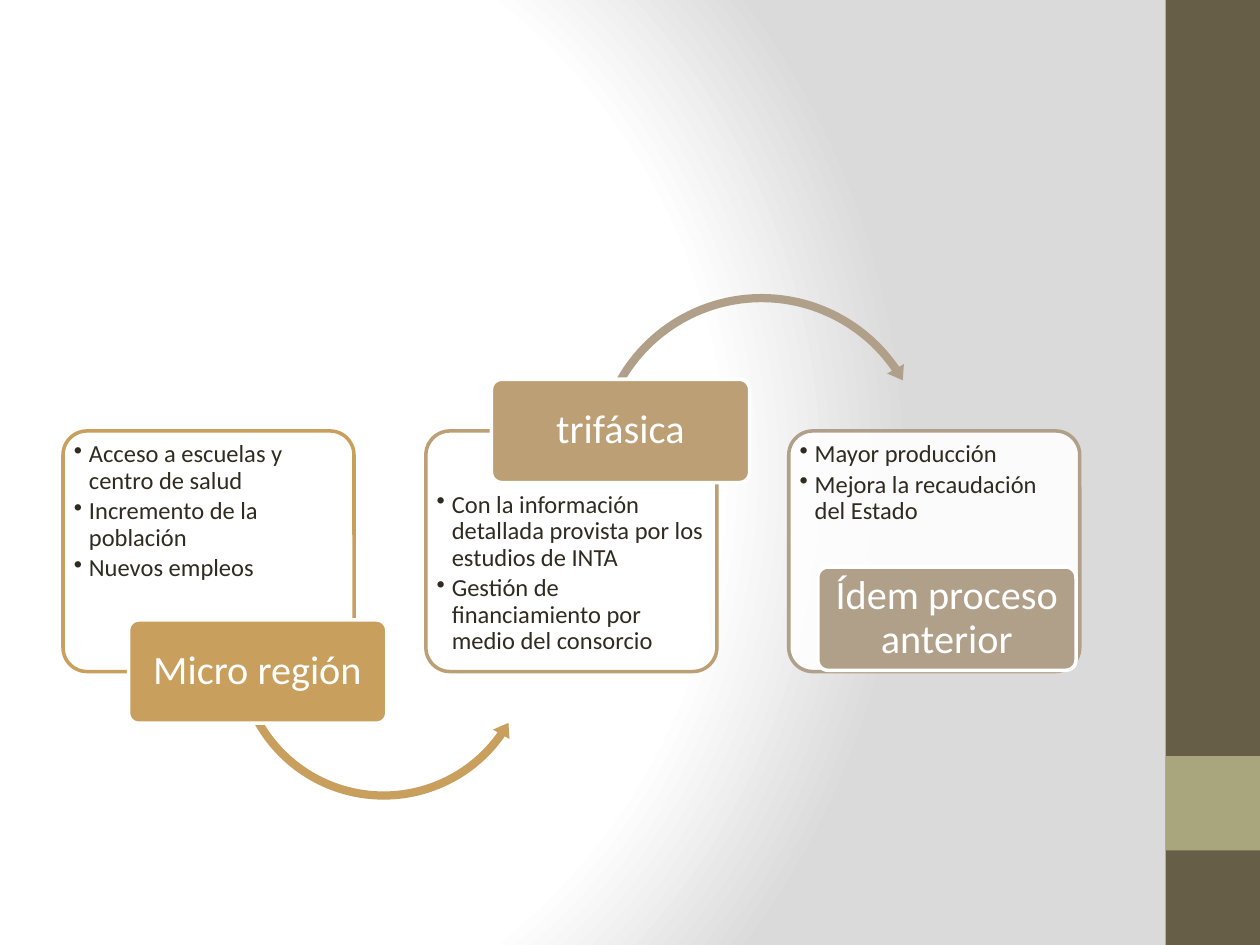
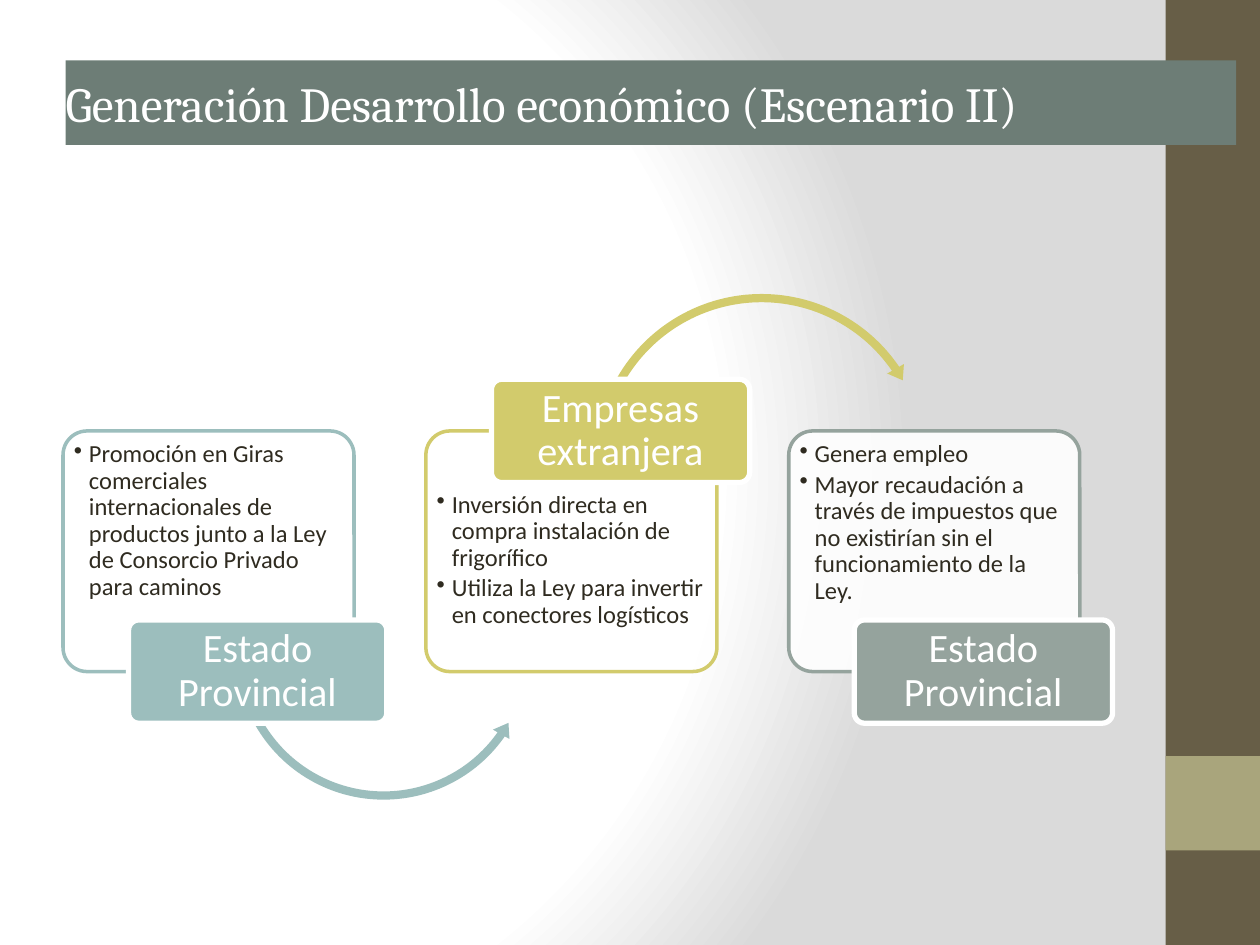
"""Build two process slides that share a background, side bands and step diagrams."""
from dataclasses import dataclass
from typing import Optional

from lxml.etree import SubElement
from pptx import Presentation
from pptx.dml.color import RGBColor
from pptx.enum.shapes import MSO_SHAPE
from pptx.enum.text import MSO_ANCHOR, MSO_AUTO_SIZE, PP_ALIGN
from pptx.oxml import parse_xml
from pptx.oxml.ns import nsdecls, qn
from pptx.util import Inches, Pt

WHITE = RGBColor(0xFF, 0xFF, 0xFF)
INK = RGBColor(0x2F, 0x2B, 0x20)
BAND = RGBColor(0x67, 0x5E, 0x47)
BAND_ACCENT = RGBColor(0xA9, 0xA5, 0x7C)
TITLE_FILL = RGBColor(0x6D, 0x7D, 0x76)
GOLD = RGBColor(0xC8, 0x9F, 0x5D)
TAN = RGBColor(0xBC, 0x9F, 0x74)
TAUPE = RGBColor(0xB1, 0xA0, 0x89)
AQUA = RGBColor(0x9C, 0xBE, 0xBD)
OLIVE = RGBColor(0xD2, 0xCB, 0x6C)
SAGE = RGBColor(0x95, 0xA3, 0x9D)

BODY_FONT = "Calibri"
TITLE_FONT = "Cambria"
TITLE_ONLY, BLANK = 5, 6

LEFT, PITCH = 0.5, 2.88
PANEL_TOP, PANEL_W, PANEL_H = 3.42, 2.31, 1.91
LABEL_DX, LABEL_W, LABEL_H = 0.52, 2.05, 0.82
LABEL_LOW, LABEL_HIGH = 4.92, 3.01

BACKGROUND = f"""<a:gradFill {nsdecls("a")} rotWithShape="1"><a:gsLst>
<a:gs pos="0"><a:srgbClr val="FFFFFF"/></a:gs>
<a:gs pos="75000"><a:srgbClr val="FFFFFF"/></a:gs>
<a:gs pos="100000"><a:srgbClr val="DADADA"/></a:gs></a:gsLst>
<a:path path="circle"><a:fillToRect l="20000" t="50000" r="100000" b="50000"/></a:path>
</a:gradFill>"""


@dataclass(frozen=True)
class Arrow:
    """Shape, box and adjustments of a curved arrow between two steps."""
    kind: MSO_SHAPE
    left: float
    top: float
    size: float
    adjustments: tuple


@dataclass(frozen=True)
class Step:
    """One step of a process: a label over a panel of bullets."""
    label: str
    bullets: tuple
    color: RGBColor
    arrow_color: Optional[RGBColor] = None
    label_at: Optional[tuple] = None


ARROWS = (
    Arrow(MSO_SHAPE.LEFT_CIRCULAR_ARROW, 1.83, 3.96, 2.43,
          (0.027, 3.247, 21.002, 90.245, 0.031)),
    Arrow(MSO_SHAPE.CIRCULAR_ARROW, 4.68, 2.29, 2.73,
          (0.024, 2.875, 195.369, 125.755, 0.028)),
)

REGION_STEPS = (
    Step("Micro región",
         ("Acceso a escuelas y centro de salud", "Incremento de la población",
          "Nuevos empleos"), GOLD, GOLD),
    Step("trifásica",
         ("Con la información detallada provista por los estudios de INTA",
          "Gestión de financiamiento por medio del consorcio"), TAN, TAUPE),
    Step("Ídem proceso anterior",
         ("Mayor producción", "Mejora la recaudación del Estado"), TAUPE,
         label_at=(6.49, 4.5)),
)

INVESTMENT_STEPS = (
    Step("Estado Provincial",
         ("Promoción en Giras comerciales internacionales de productos junto a la "
          "Ley de Consorcio Privado para caminos",), AQUA, AQUA),
    Step("Empresas extranjera",
         ("Inversión directa en compra instalación de frigorífico",
          "Utiliza la Ley para invertir en conectores logísticos"), OLIVE, OLIVE),
    Step("Estado Provincial",
         ("Genera empleo",
          "Mayor recaudación a través de impuestos que no existirían sin el "
          "funcionamiento de la Ley."), SAGE),
)


def add_block(slide, kind, left, top, width, height, fill, line=None, line_width=2.0):
    """Add a preset shape without shadow."""
    sp = slide.shapes.add_shape(kind, Inches(left), Inches(top), Inches(width), Inches(height))
    sp.shadow.inherit = False
    sp.fill.solid()
    sp.fill.fore_color.rgb = fill
    if line is None:
        sp.line.fill.background()
    else:
        sp.line.color.rgb = line
        sp.line.width = Pt(line_width)
    return sp


def add_bullet(p) -> None:
    """Give a paragraph a hanging bullet."""
    pPr = p._p.get_or_add_pPr()
    pPr.set("marL", str(Inches(0.12)))
    pPr.set("indent", str(Inches(-0.12)))
    SubElement(pPr, qn("a:buChar")).set("char", "•")


def write_text(sp, *paragraphs: str, size: float, color: RGBColor, font=BODY_FONT,
               align=PP_ALIGN.LEFT, anchor=MSO_ANCHOR.TOP, insets=(0.03, 0.03, 0.03, 0.03),
               bullets=False, spacing=0.9, after=0.0) -> None:
    """Write formatted paragraphs into a shape."""
    tf = sp.text_frame
    tf.word_wrap = True
    tf.auto_size = MSO_AUTO_SIZE.NONE
    tf.vertical_anchor = anchor
    tf.margin_left, tf.margin_top, tf.margin_right, tf.margin_bottom = map(Inches, insets)
    for i, text in enumerate(paragraphs):
        p = tf.add_paragraph() if i else tf.paragraphs[0]
        if bullets:
            add_bullet(p)
        p.alignment = align
        p.line_spacing = spacing
        p.space_after = Pt(after)
        r = p.add_run()
        r.text = text
        r.font.name = font
        r.font.size = Pt(size)
        r.font.color.rgb = color


def add_panel(slide, step: Step, left: float, text_top: float) -> None:
    """Add the translucent outlined panel with the bullets of a step."""
    sp = add_block(slide, MSO_SHAPE.ROUNDED_RECTANGLE, left, PANEL_TOP, PANEL_W, PANEL_H,
                   WHITE, step.color)
    sp.adjustments[0] = 0.1
    color = sp.fill._xPr.find(qn("a:solidFill"))[0]
    SubElement(color, qn("a:alpha")).set("val", "90000")
    write_text(sp, *step.bullets, size=14, color=INK, bullets=True, after=2.3,
               insets=(0.03, text_top, 0.03, 0.03))


def add_arrow(slide, arrow: Arrow, color: RGBColor) -> None:
    """Add a curved arrow."""
    sp = add_block(slide, arrow.kind, arrow.left, arrow.top, arrow.size, arrow.size, color)
    for i, value in enumerate(arrow.adjustments):
        sp.adjustments[i] = value


def add_label(slide, step: Step, left: float, top: float, outline: float) -> None:
    """Add the filled label of a step."""
    sp = add_block(slide, MSO_SHAPE.ROUNDED_RECTANGLE, left, top, LABEL_W, LABEL_H,
                   step.color, WHITE, outline)
    sp.adjustments[0] = 0.1
    write_text(sp, step.label, size=23, color=WHITE, align=PP_ALIGN.CENTER,
               anchor=MSO_ANCHOR.MIDDLE, insets=(0.05, 0.03, 0.05, 0.03))


def add_process(slide, steps: tuple, outline: float) -> None:
    """Draw the steps from left to right, with labels alternately low and high."""
    for i, step in enumerate(steps):
        left = LEFT + i * PITCH
        high = i % 2 == 1
        add_panel(slide, step, left, 0.43 if high else 0.03)
        if step.arrow_color is not None:
            add_arrow(slide, ARROWS[i], step.arrow_color)
        label_left, label_top = step.label_at or (
            left + LABEL_DX, LABEL_HIGH if high else LABEL_LOW)
        add_label(slide, step, label_left, label_top, outline)


def set_background(master) -> None:
    """Give the master the radial gradient background."""
    master.background.fill.solid()
    bgPr = master.element.find(f".//{qn('p:bgPr')}")
    bgPr.replace(bgPr[0], parse_xml(BACKGROUND))


def new_slide(prs, layout: int):
    """Add a slide with the side bands."""
    slide = prs.slides.add_slide(prs.slide_layouts[layout])
    add_block(slide, MSO_SHAPE.RECTANGLE, 9.25, 0, 0.75, 7.5, BAND)
    add_block(slide, MSO_SHAPE.RECTANGLE, 9.25, 6, 0.75, 0.75, BAND_ACCENT)
    return slide


def set_title(slide, text: str) -> None:
    """Place and format the title in front of the side bands."""
    title = slide.shapes.title
    title.left, title.top = Inches(0.52), Inches(0.48)
    title.width, title.height = Inches(9.29), Inches(0.67)
    title.fill.solid()
    title.fill.fore_color.rgb = TITLE_FILL
    write_text(title, text, size=28, color=WHITE, font=TITLE_FONT, spacing=1.0,
               anchor=MSO_ANCHOR.BOTTOM, insets=(0, 0.1, 0, 0.1))
    slide.shapes.element.append(title.element)


def main() -> None:
    """Build and save the presentation."""
    prs = Presentation()
    prs.slide_width, prs.slide_height = Inches(10), Inches(7.5)
    set_background(prs.slide_master)

    add_process(new_slide(prs, BLANK), REGION_STEPS, outline=2)

    slide = new_slide(prs, TITLE_ONLY)
    add_process(slide, INVESTMENT_STEPS, outline=3)
    set_title(slide, "Generación Desarrollo económico (Escenario II)")

    prs.save("out.pptx")


if __name__ == "__main__":
    main()
